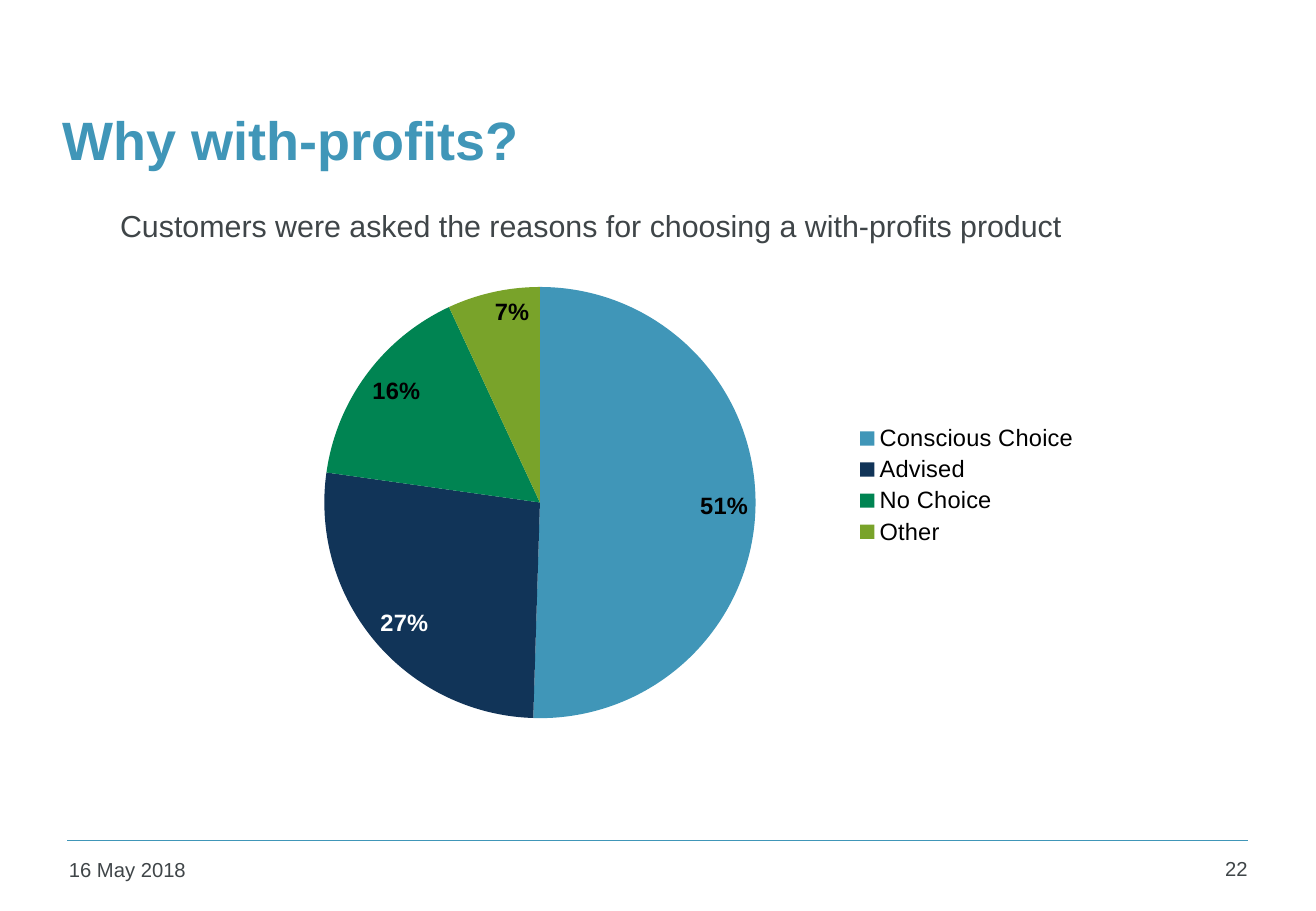
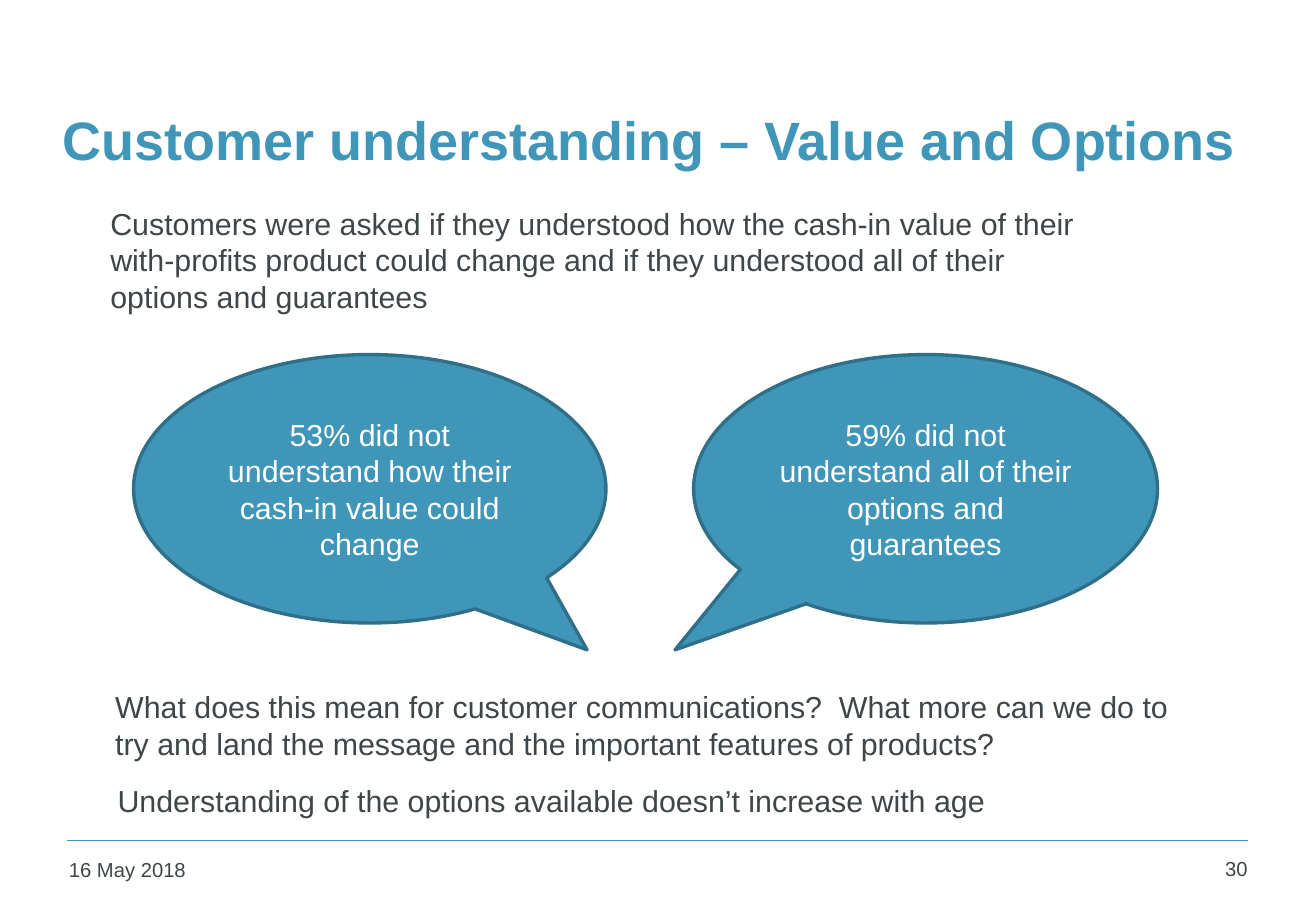
from lxml import etree
from pptx import Presentation
from pptx.chart.data import CategoryChartData
from pptx.dml.color import RGBColor
from pptx.enum import chart as ch, shapes, text
from pptx.oxml.ns import qn
from pptx.util import Pt

FONT = "Arial"
C = {"blue": "4096B8", "edge": "2F6F88", "navy": "113458", "green": "008452",
     "lime": "79A32A", "ink": "3F4548", "black": "000000", "white": "FFFFFF"}
TITLE_BOX = (30, 66, 716, 33)
LEFT, CENTER, RIGHT = text.PP_ALIGN.LEFT, text.PP_ALIGN.CENTER, text.PP_ALIGN.RIGHT
TOP, MIDDLE = text.MSO_ANCHOR.TOP, text.MSO_ANCHOR.MIDDLE


def rgb(name):
    return RGBColor.from_string(C[name])


def style_font(font, size, color="ink", bold=False):
    font.name, font.size, font.bold = FONT, Pt(size), bold
    font.color.rgb = rgb(color)


def write(sp, words, size=18, color="ink", bold=False, align=LEFT, anchor=TOP, spacing=None):
    tf = sp.text_frame
    tf.word_wrap, tf.vertical_anchor = True, anchor
    p = tf.paragraphs[0]
    p.alignment = align
    if spacing:
        p.line_spacing = spacing
    r = p.add_run()
    r.text = words
    style_font(r.font, size, color, bold)


def add_text(s, box, words, **fmt):
    write(s.shapes.add_textbox(*map(Pt, box)), words, **fmt)


def add_frame(prs, title, number):
    """Blank slide with the shared title, rule and footer."""
    s = prs.slides.add_slide(prs.slide_layouts[6])
    # Footer rule
    ln = s.shapes.add_connector(shapes.MSO_CONNECTOR.STRAIGHT,
                                Pt(39.9), Pt(498.2), Pt(740), Pt(498.2))
    ln.line.color.rgb, ln.line.width = rgb("blue"), Pt(1)
    etree.SubElement(ln._element.spPr, qn("a:effectLst"))
    # Title, date and slide number
    add_text(s, TITLE_BOX, title, size=32, color="blue", bold=True, anchor=MIDDLE)
    add_text(s, (33.8, 504.7, 172, 26), "16 May 2018", size=12)
    add_text(s, (691.2, 504, 55.4, 26.6), str(number), size=12, align=RIGHT)
    return s


def set_layout(parent, index, inner=False, **fractions):
    """Fix a chart part's place as fractions of the chart."""
    for old in parent.findall(qn("c:layout")):
        parent.remove(old)
    layout = etree.Element(qn("c:layout"))
    manual = etree.SubElement(layout, qn("c:manualLayout"))
    values = {"layoutTarget": "inner"} if inner else {}
    values.update(xMode="edge", yMode="edge", **fractions)
    for tag, value in values.items():
        etree.SubElement(manual, qn("c:" + tag)).set("val", str(value))
    parent.insert(index, layout)


def add_pie(s, box, slices):
    data = CategoryChartData(number_format="0%")
    data.categories = [name for name, _, _ in slices]
    data.add_series("Series 1", [value for _, value, _ in slices])
    chart = s.shapes.add_chart(ch.XL_CHART_TYPE.PIE, *map(Pt, box), data).chart
    chart.has_title = False
    style_font(chart.font, 10)
    # Legend
    chart.has_legend = True
    legend = chart.legend
    legend.position = ch.XL_LEGEND_POSITION.RIGHT
    legend.include_in_layout = False
    style_font(legend.font, 14, "black")
    set_layout(legend._element, 1, x=0.72, y=0.37, w=0.27, h=0.26)
    # Plot
    plot = chart.plots[0]
    plot.vary_by_categories = True
    set_layout(plot._element.getparent(), 0, inner=True, x=0.11, y=0.1, w=0.5, h=0.87)
    # Series labels
    ser = plot.series[0]
    labels = ser.data_labels
    labels.show_value, labels.show_percentage = True, False
    labels.number_format, labels.number_format_is_linked = "0%", False
    labels.position = ch.XL_LABEL_POSITION.INSIDE_END
    style_font(labels.font, 14, "black", True)
    # Slice colours, with a white label on the dark slice
    for i, (_, _, color) in enumerate(slices):
        point = ser.points[i]
        point.format.fill.solid()
        point.format.fill.fore_color.rgb = rgb(color)
        if color == "navy":
            style_font(point.data_label.font, 14, "white", True)
            point.data_label.position = ch.XL_LABEL_POSITION.INSIDE_END


def add_callout(s, box, words, tail):
    sp = s.shapes.add_shape(shapes.MSO_SHAPE.OVAL_CALLOUT, *map(Pt, box))
    sp.shadow.inherit = False
    sp.adjustments[0], sp.adjustments[1] = tail
    sp.fill.solid()
    sp.fill.fore_color.rgb = rgb("blue")
    sp.line.color.rgb, sp.line.width = rgb("edge"), Pt(2)
    write(sp, words, color="white", align=CENTER, anchor=MIDDLE)


def reasons_slide(prs):
    s = add_frame(prs, "Why with-profits?", 22)
    add_pie(s, (136, 140.4, 511.2, 294.5),
            [("Conscious Choice", 0.51, "blue"), ("Advised", 0.27, "navy"),
             ("No Choice", 0.16, "green"), ("Other", 0.07, "lime")])
    add_text(s, (64.1, 119.5, 603.4, 28.8),
             "Customers were asked the reasons for choosing a with-profits product")


def understanding_slide(prs):
    s = add_frame(prs, "Customer understanding – Value and Options", 30)
    add_text(s, (58.3, 118, 603.4, 72.7),
             "Customers were asked if they understood how the cash-in value of their "
             "with-profits product could change and if they understood all of their "
             "options and guarantees")
    # Findings
    for left, width, words, tail in (
            (79.2, 280, "53% did not understand how their cash-in value could change",
             (0.46, 0.6)),
            (411.1, 275, "59% did not understand all of their options and guarantees",
             (-0.54, 0.6))):
        add_callout(s, (left, 210.2, width, 159.1), words, tail)
    # Questions and remark
    add_text(s, (61.2, 404.6, 642.2, 51.1),
             "What does this mean for customer communications?  What more can we do to "
             "try and land the message and the important features of products?")
    add_text(s, (62.6, 449.3, 635, 36),
             "Understanding of the options available doesn’t increase with age", spacing=1.5)


def main():
    prs = Presentation()
    prs.slide_width, prs.slide_height = Pt(780), Pt(540)
    reasons_slide(prs)
    understanding_slide(prs)
    prs.save("out.pptx")


if __name__ == "__main__":
    main()
